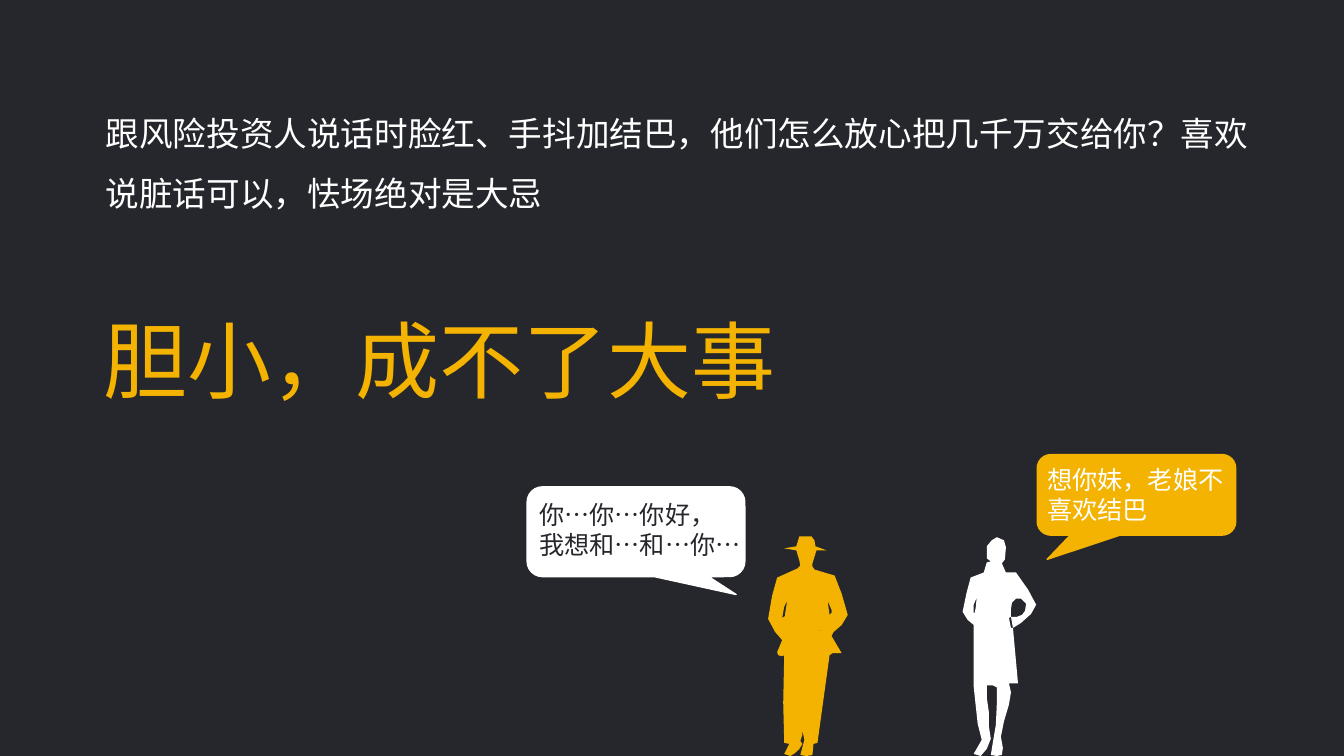
"""Build the slide on nervous pitching, with two figures talking."""
from lxml import etree
from pptx import Presentation
from pptx.dml.color import RGBColor
from pptx.enum import shapes, text
from pptx.oxml import ns
from pptx.util import Pt


class Theme:
    night = RGBColor(0x26, 0x27, 0x2C)
    amber = RGBColor(0xF3, 0xB3, 0x00)
    white = RGBColor(0xFF, 0xFF, 0xFF)
    font = "Noto Sans CJK SC"
    headline = Pt(60)
    body = Pt(24)
    speech = Pt(18)


def write(area, wording, size, color, line_spacing=None):
    box = slide.shapes.add_textbox(*map(Pt, area))
    frame = box.text_frame
    frame.text = wording
    frame.word_wrap = False
    frame.auto_size = text.MSO_AUTO_SIZE.SHAPE_TO_FIT_TEXT
    for paragraph in frame.paragraphs:
        paragraph.line_spacing = line_spacing
        for run in paragraph.runs:
            run.font.size = size
            run.font.name = Theme.font
            run.font.color.rgb = color
            east_asian = etree.SubElement(run.font._element, ns.qn("a:ea"))
            east_asian.set("typeface", Theme.font)


def paint(shape, color):
    shape.shadow.inherit = False
    shape.fill.solid()
    shape.fill.fore_color.rgb = color


deck = Presentation()
deck.slide_width, deck.slide_height = Pt(960), Pt(540)
slide = deck.slides.add_slide(deck.slide_layouts[6])
slide.background.fill.solid()
slide.background.fill.fore_color.rgb = Theme.night

write((68.4, 62.64, 830.16, 93.6),
      "跟风险投资人说话时脸红、手抖加结巴，他们怎么放心把几千万交给你？喜欢\n说脏话可以，怯场绝对是大忌",
      Theme.body, Theme.white, 1.5)
write((66.96, 216.72, 494.64, 79.2), "胆小，成不了大事", Theme.headline, Theme.amber)

man = [
    [(827, 627), (835, 620), (841, 610), (835, 589), (828, 571), (808, 565),
     (806, 562), (806, 559), (810, 546), (820, 546), (809, 542), (808, 536),
     (805, 532), (793, 532), (790, 542), (778, 544), (790, 546), (793, 556),
     (794, 561), (791, 564), (771, 573), (766, 591), (762, 614), (769, 627),
     (776, 635), (771, 647), (772, 650), (776, 651), (778, 650), (777, 697),
     (778, 737), (783, 738), (778, 748), (784, 750), (789, 747), (793, 743),
     (796, 738), (794, 735), (796, 729), (796, 724), (798, 734), (794, 749),
     (800, 750), (806, 749), (807, 738), (811, 737), (823, 650), (826, 648),
     (835, 648), (825, 631)],
    [(821, 596), (825, 605), (825, 608), (823, 610)],
    [(815, 625), (814, 626), (812, 626)],
    [(781, 596), (779, 608), (779, 611), (776, 613), (778, 602)],
]
woman = [
    [(1008, 568), (998, 568), (994, 559), (997, 555), (998, 543), (996, 536),
     (989, 533), (984, 536), (979, 542), (979, 554), (983, 557), (979, 558),
     (976, 568), (963, 573), (959, 588), (955, 607), (960, 615), (966, 620),
     (966, 681), (968, 700), (970, 718), (974, 734), (966, 748), (973, 750),
     (979, 743), (983, 733), (981, 720), (981, 706), (979, 692), (979, 680),
     (985, 680), (989, 682), (989, 698), (988, 719), (986, 731), (983, 749),
     (989, 750), (994, 749), (995, 742), (993, 731), (996, 716), (1001, 699),
     (1003, 687), (1001, 678), (1010, 678), (1005, 623), (1003, 623),
     (1001, 613), (1003, 612), (1003, 604), (1004, 598), (1008, 594),
     (1013, 594), (1018, 599), (1017, 606), (1014, 610), (1009, 612),
     (1003, 612), (1005, 623), (1013, 618), (1023, 609), (1028, 600),
     (1020, 585)],
    [(968, 603), (967, 608), (966, 608), (966, 600), (969, 593)],
]
hundredth_inch = Pt(0.72)
for outlines, color in ((man, Theme.amber), (woman, Theme.white)):
    builder = slide.shapes.build_freeform(*outlines[0][0], scale=hundredth_inch)
    builder.add_line_segments(outlines[0][1:])
    for gap in outlines[1:]:
        builder.move_to(*gap[0])
        builder.add_line_segments(gap[1:])
    figure = builder.convert_to_shape()
    paint(figure, color)
    figure.line.fill.background()

speeches = [
    ((376.56, 347.76, 155.52, 64.08), (0.46, 0.7, 0.17), Theme.white,
     (378, 352.8, 158.4, 50.4), "你…你…你好，\n我想和…和…你…", Theme.night),
    ((740.88, 324.72, 141.84, 57.6), (-0.45, 0.8, 0.17), Theme.amber,
     (740.88, 328.32, 140.4, 50.4), "想你妹，老娘不\n喜欢结巴", Theme.white),
]
for outline, tail, fill, area, wording, ink in speeches:
    bubble = slide.shapes.add_shape(
        shapes.MSO_SHAPE.ROUNDED_RECTANGULAR_CALLOUT, *map(Pt, outline))
    for index, amount in enumerate(tail):
        bubble.adjustments[index] = amount
    paint(bubble, fill)
    bubble.line.color.rgb = fill
    bubble.line.width = Pt(1)
    write(area, wording, Theme.speech, ink)

deck.save("out.pptx")
